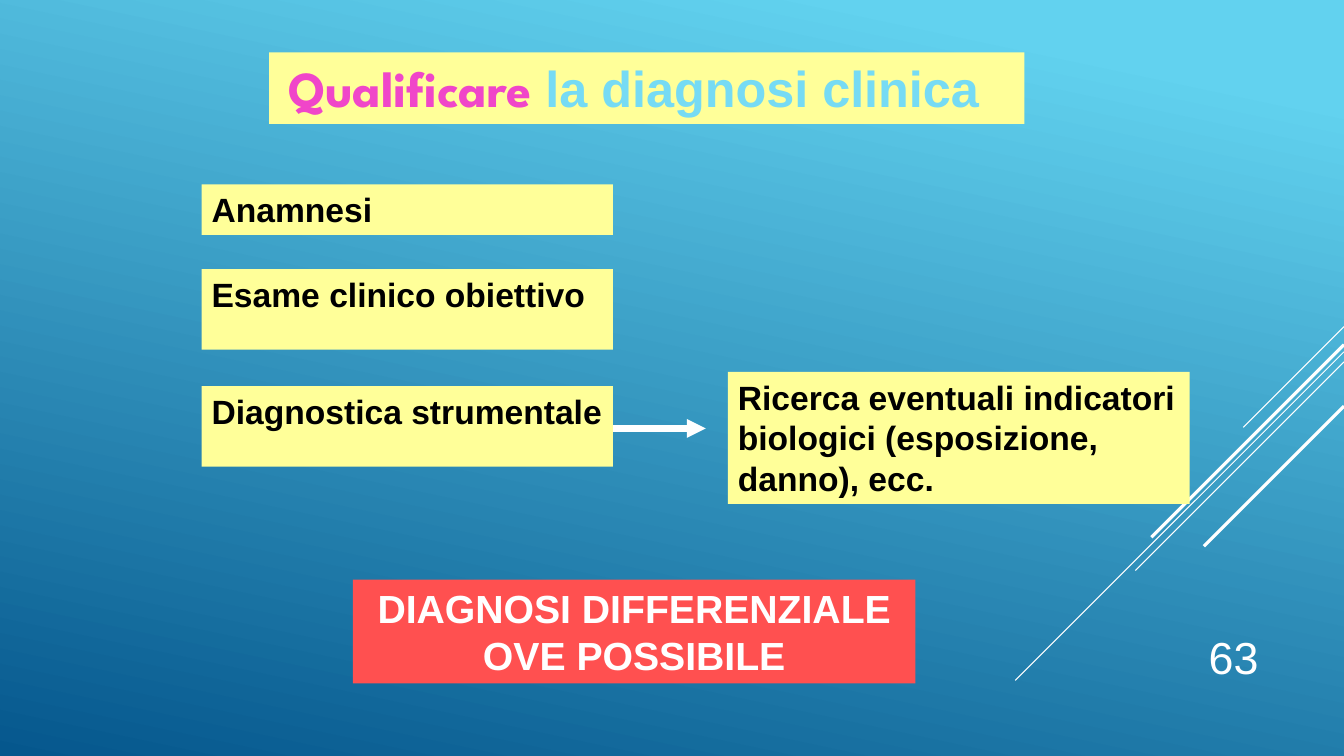
import pptx
import pptx.util
import pptx.dml.color
import pptx.enum.shapes
import pptx.enum.text
import lxml.etree

Inches, Pt = pptx.util.Inches, pptx.util.Pt
ALIGN, ANCHOR = pptx.enum.text.PP_ALIGN, pptx.enum.text.MSO_ANCHOR
WIDTH, HEIGHT = 13.33, 7.5
COLORS = {
    name: pptx.dml.color.RGBColor.from_string(code)
    for name, code in {
        "sky": "62D2EF", "deep": "05578D", "white": "FFFFFF", "black": "000000",
        "yellow": "FFFF99", "red": "FF5050", "pink": "F046C9", "pale": "76DBF4",
    }.items()
}


def add_line(start, end, weight):
    """Draw a white line without shadow and return it."""
    line = page.shapes.add_connector(
        pptx.enum.shapes.MSO_CONNECTOR.STRAIGHT, *map(Inches, start + end))
    line.line.color.rgb = COLORS["white"]
    line.line.width = Pt(weight)
    lxml.etree.SubElement(line.line._get_or_add_ln().getparent(),
                          pptx.oxml.ns.qn("a:effectLst"))
    return line


def fill_text(box, lines, size, color, align, bold=True):
    """Write one paragraph per line in a single Arial style."""
    frame = box.text_frame
    frame.word_wrap = True
    frame.vertical_anchor = ANCHOR.TOP
    frame.text = "\n".join(lines)
    for para in frame.paragraphs:
        para.alignment = align
        for span in para.runs:
            span.font.name = "Arial"
            span.font.size = Pt(size)
            span.font.bold = bold
            span.font.color.rgb = COLORS[color]


deck = pptx.Presentation()
deck.slide_width, deck.slide_height = Inches(WIDTH), Inches(HEIGHT)
page = deck.slides.add_slide(deck.slide_layouts[5])

# Background
backdrop = page.background.fill
backdrop.gradient()
backdrop.gradient_angle = 360 - 102
for stop, color, position in zip(backdrop.gradient_stops, ("sky", "deep"), (0.1, 1)):
    stop.color.rgb = COLORS[color]
    stop.position = position

# Diagonals falling at 45 degrees from the right edge: top, run, weight
for top, run, weight in [(3.24, 1, 0.75), (3.49, 3.26, 0.75), (3.59, 2.07, 0.75),
                         (3.42, 1.91, 2.25), (4.03, 1.39, 2.25)]:
    add_line((WIDTH, top), (WIDTH - run, top + run), weight)

# Title
title = page.shapes.title
title.left, title.top, title.width, title.height = map(Inches, (2.67, 0.52, 7.49, 0.71))
title.fill.solid()
title.fill.fore_color.rgb = COLORS["yellow"]
fill_text(title, ["Qualificare "], 36, "pink", ALIGN.LEFT)
title.text_frame.auto_size = pptx.enum.text.MSO_AUTO_SIZE.NONE
title.text_frame.margin_left = Inches(0.19)
heading = title.text_frame.paragraphs[0]
heading.runs[0].font.name = "League Spartan"
subject = heading.add_run()
subject.text = "la diagnosi clinica"
subject.font.name = "Arial"
subject.font.size = Pt(36)
subject.font.bold = True
subject.font.color.rgb = COLORS["pale"]

# Steps, their follow-up and the conclusion
STEP_LEFT, STEP_WIDTH = 2, 4.08
step_style = ("yellow", 24, "black", ALIGN.LEFT)
for place, lines, (fill, size, color, align) in [
    ((STEP_LEFT, 1.83, STEP_WIDTH, 0.5), ["Anamnesi"], step_style),
    ((STEP_LEFT, 2.67, STEP_WIDTH, 0.8), ["Esame clinico obiettivo"], step_style),
    ((STEP_LEFT, 3.83, STEP_WIDTH, 0.8), ["Diagnostica strumentale"], step_style),
    ((7.22, 3.69, 4.58, 1.31),
     ["Ricerca eventuali indicatori", "biologici (esposizione,", "danno), ecc."], step_style),
    ((3.5, 5.75, 5.58, 1.03), ["DIAGNOSI DIFFERENZIALE", "OVE POSSIBILE"],
     ("red", 28, "white", ALIGN.CENTER)),
]:
    box = page.shapes.add_shape(
        pptx.enum.shapes.MSO_SHAPE.RECTANGLE, *map(Inches, place))
    box.shadow.inherit = False
    box.fill.solid()
    box.fill.fore_color.rgb = COLORS[fill]
    box.line.fill.background()
    fill_text(box, lines, size, color, align)

arrow = add_line((STEP_LEFT + STEP_WIDTH, 4.25), (7, 4.25), 4.5)
lxml.etree.SubElement(arrow.line._get_or_add_ln(),
                      pptx.oxml.ns.qn("a:tailEnd"), type="triangle")

# Page number
number = page.shapes.add_textbox(*map(Inches, (11.33, 6.1, 1.25, 0.73)))
fill_text(number, ["63"], 32, "white", ALIGN.RIGHT, bold=False)
number.text_frame.vertical_anchor = ANCHOR.BOTTOM

deck.save("out.pptx")
